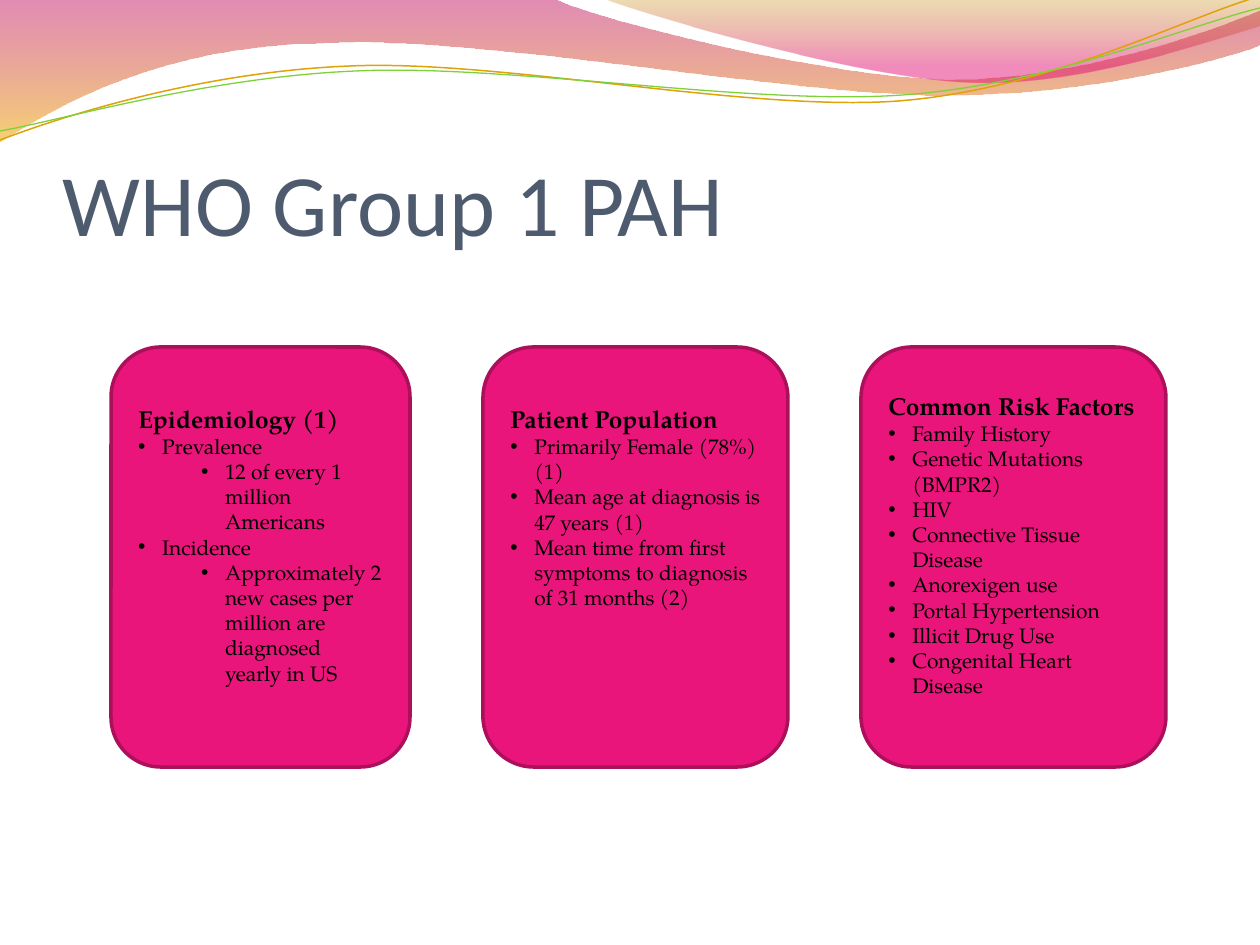
from lxml.etree import SubElement
from pptx import Presentation
from pptx.dml.color import RGBColor
from pptx.enum.shapes import MSO_SHAPE
from pptx.enum.text import MSO_ANCHOR, PP_ALIGN
from pptx.oxml.ns import qn
from pptx.util import Inches, Pt

SCALE = 914400 / 126
LINE = 25

BANDS = [
    ([(0, 0), (554, -1), (600, 21, 837, 79, 955, 79),
      (1075, 79, 1207, 33, 1260, 11), (1261, 45),
      (1239, 55, 1096, 96, 940, 95), (784, 95, 481, 35, 324, 43),
      (163, 45, 58, 105, -1, 142), (0, 0)],
     [(0, "BD0059", 45), (1, "F0AB00", 55)]),
    ([(604, -1), (641, 14, 859, 78, 969, 82),
      (1079, 87, 1211, 40, 1260, 26), (1260, 0), (604, -1)],
     [(0, "C38B00", 30), (0.8, "E1006B", 45)]),
]
WAVES = [
    ([(0, 140), (60, 117, 199, 72, 349, 66), (498, 59, 747, 112, 898, 101),
      (1050, 89, 1182, 19, 1257, -3)], "E0A209", 0.85),
    ([(0, 131), (59, 121, 207, 77, 357, 71), (508, 64, 752, 106, 903, 95),
      (1053, 84, 1186, 26, 1260, 8)], "7FD13B", 0.75),
]
CARDS = [
    (111, 299, 1, "Epidemiology (1)", [
        (0, "Prevalence"),
        (1, "12 of every 1 million Americans"),
        (0, "Incidence"),
        (1, "Approximately 2 new cases per million are diagnosed yearly in US")]),
    (483, 305, 4, "Patient Population", [
        (0, "Primarily Female (78%) (1)"),
        (0, "Mean age at diagnosis is 47 years (1)"),
        (0, "Mean time from first symptoms to diagnosis of 31 months (2)")]),
    (861, 305, 1, "Common Risk Factors", [
        (0, "Family History"),
        (0, "Genetic Mutations (BMPR2)"),
        (0, "HIV"),
        (0, "Connective Tissue Disease"),
        (0, "Anorexigen use"),
        (0, "Portal Hypertension"),
        (0, "Illicit Drug Use"),
        (0, "Congenital Heart Disease")]),
]


def px(n):
    return round(n * SCALE)


def color(code):
    return RGBColor.from_string(code)


class Deck:
    head = "Calibri"
    body = "TeX Gyre Pagella"
    fill = "EA157A"
    edge = "AD105A"

    def __init__(self):
        self.prs = Presentation()
        self.prs.slide_width = Inches(10)
        self.prs.slide_height = Inches(7.5)
        self.slide = self.prs.slides.add_slide(self.prs.slide_layouts[6])
        self.shapes = self.slide.shapes

    def curve(self, parts, close):
        ends = [(px(part[-2]), px(part[-1])) for part in parts]
        pen = self.shapes.build_freeform(*ends[0])
        pen.add_line_segments(ends[1:], close=close)
        shape = pen.convert_to_shape()
        shape.shadow.inherit = False
        legs = list(shape._element.spPr.iter(qn("a:lnTo")))
        for leg, part in zip(legs, parts[1:]):
            if len(part) == 6:
                self.bend(shape, leg, part)
        return shape

    def bend(self, shape, leg, part):
        leg.tag = qn("a:cubicBezTo")
        end = leg[0]
        for x, y in (part[:2], part[2:4]):
            knob = SubElement(leg, qn("a:pt"))
            knob.set("x", str(px(x) - shape.left))
            knob.set("y", str(px(y) - shape.top))
        leg.append(end)

    def band(self, parts, stops):
        shape = self.curve(parts, True)
        shape.line.fill.background()
        shape.fill.gradient()
        shape.fill.gradient_angle = 270
        for stop, (place, code, alpha) in zip(shape.fill.gradient_stops, stops):
            stop.position = place
            stop.color.rgb = color(code)
        tags = shape._element.spPr.iter(qn("a:srgbClr"))
        for tag, (place, code, alpha) in zip(tags, stops):
            SubElement(tag, qn("a:alpha")).set("val", str(alpha * 1000))

    def wave(self, parts, code, width):
        shape = self.curve(parts, False)
        shape.fill.background()
        shape.line.color.rgb = color(code)
        shape.line.width = Pt(width)

    def style(self, para, font, size, code, bold=False):
        para.alignment = PP_ALIGN.LEFT
        for run in para.runs:
            run.font.name = font
            run.font.size = Pt(size)
            run.font.bold = bold
            run.font.color.rgb = color(code)

    def title(self, text):
        box = self.shapes.add_textbox(px(63), px(97), px(1134), px(157))
        frame = box.text_frame
        frame.word_wrap = True
        frame.vertical_anchor = MSO_ANCHOR.BOTTOM
        frame.margin_left = frame.margin_right = frame.margin_bottom = 0
        frame.text = text
        self.style(frame.paragraphs[0], self.head, 50, "4E5B6F")

    def bullet(self, frame, level, text):
        para = frame.add_paragraph()
        para.text = text
        para.level = level
        self.style(para, self.body, 12, "000000")
        props = para._p.get_or_add_pPr()
        props.set("marL", str(px(24 + 63 * level)))
        props.set("indent", str(px(-24)))
        SubElement(props, qn("a:buFont")).set("typeface", "Arial")
        SubElement(props, qn("a:buChar")).set("char", "•")

    def card(self, left, width, spare, head, items):
        shape = self.shapes.add_shape(MSO_SHAPE.ROUNDED_RECTANGLE,
                                      px(left), px(347), px(width), px(420))
        shape.shadow.inherit = False
        shape.fill.solid()
        shape.fill.fore_color.rgb = color(self.fill)
        shape.line.color.rgb = color(self.edge)
        shape.line.width = Pt(2)
        frame = shape.text_frame
        frame.word_wrap = True
        frame.vertical_anchor = MSO_ANCHOR.MIDDLE
        frame.margin_bottom = px(6 + LINE * spare)
        frame.text = head
        self.style(frame.paragraphs[0], self.body, 14, "000000", True)
        for level, text in items:
            self.bullet(frame, level, text)


def main():
    deck = Deck()
    for band in BANDS:
        deck.band(*band)
    for wave in WAVES:
        deck.wave(*wave)
    deck.title("WHO Group 1 PAH")
    for card in CARDS:
        deck.card(*card)
    deck.prs.save("out.pptx")


if __name__ == "__main__":
    main()
